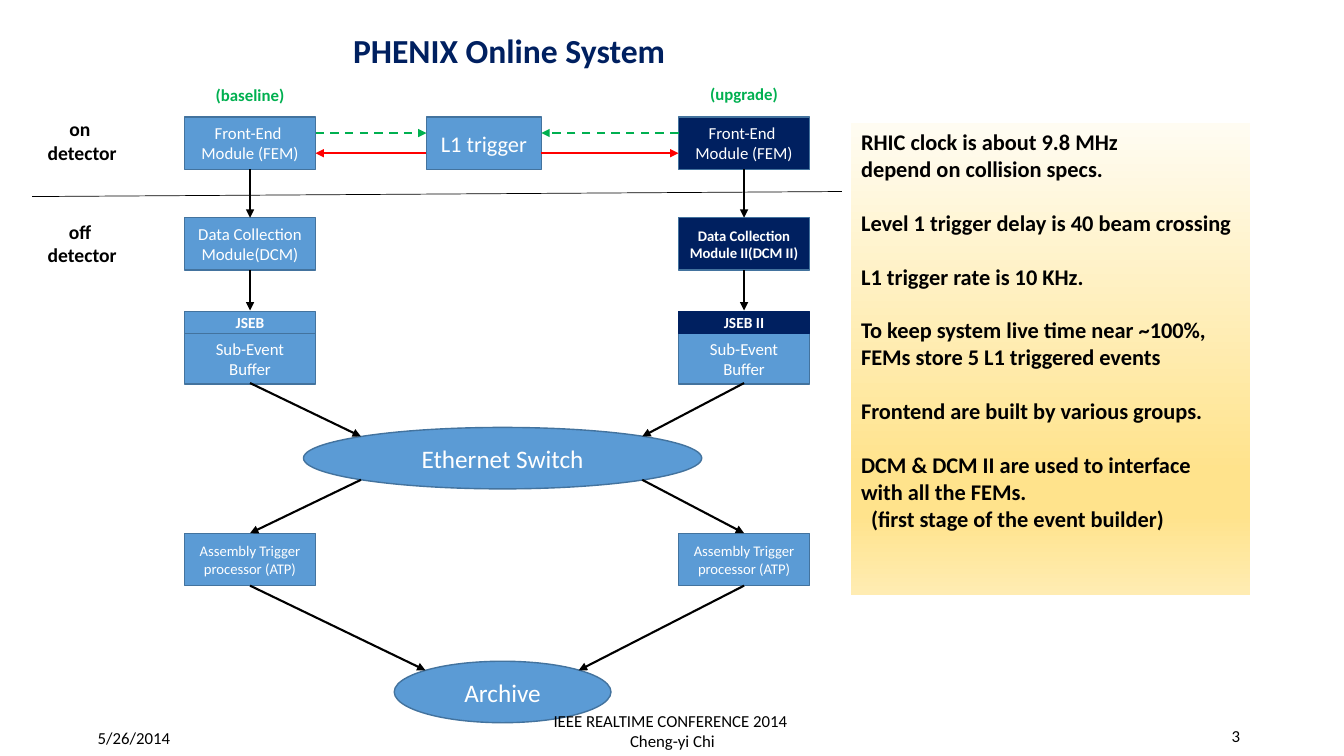
from copy import deepcopy

from pptx import Presentation
from pptx.dml.color import RGBColor
from pptx.enum.dml import MSO_LINE
from pptx.enum.shapes import MSO_CONNECTOR, MSO_SHAPE
from pptx.enum.text import MSO_ANCHOR, MSO_AUTO_SIZE, PP_ALIGN
from pptx.oxml.ns import qn
from pptx.oxml.xmlchemy import OxmlElement
from pptx.util import Inches, Pt

RECT, ELLIPSE = MSO_SHAPE.RECTANGLE, MSO_SHAPE.OVAL
STRAIGHT, DASH = MSO_CONNECTOR.STRAIGHT, MSO_LINE.DASH
LEFT, CENTER, RIGHT = PP_ALIGN.LEFT, PP_ALIGN.CENTER, PP_ALIGN.RIGHT
TOP, MIDDLE = MSO_ANCHOR.TOP, MSO_ANCHOR.MIDDLE
NO_FIT = MSO_AUTO_SIZE.NONE

WHITE = RGBColor(0xFF, 0xFF, 0xFF)
BLACK = RGBColor(0x00, 0x00, 0x00)
BLUE = RGBColor(0x5B, 0x9B, 0xD5)
EDGE = RGBColor(0x43, 0x73, 0x9E)
NAVY = RGBColor(0x00, 0x20, 0x60)
GREEN = RGBColor(0x00, 0xB0, 0x50)
RED = RGBColor(0xFF, 0x00, 0x00)
PALE = RGBColor(0xFF, 0xFC, 0xF2)
GOLD = RGBColor(0xFF, 0xE3, 0x8C)
SAND = RGBColor(0xFF, 0xEC, 0xB2)
PANEL_STOPS = [(0, PALE), (0.74, GOLD), (0.83, GOLD), (1, SAND)]

BOX_W, BOX_H = 1.3, 0.52
FEM = "Front-End \nModule (FEM)"
ATP = "Assembly Trigger processor (ATP)"
BUFFER = "Sub-Event\nBuffer"
COLUMNS = [
    dict(x=1.83, fill=BLUE, edge=EDGE, dcm="Data Collection\nModule(DCM)", dcm_size=12,
         dcm_bold=False, jseb="JSEB", switch_x=3.58, archive_x=4.22,
         label="(baseline)", label_y=0.79),
    dict(x=6.73, fill=NAVY, edge=NAVY, dcm="Data Collection\nModule II(DCM II)", dcm_size=10.5,
         dcm_bold=True, jseb="JSEB II", switch_x=6.37, archive_x=5.74,
         label="(upgrade)", label_y=0.78),
]
NOTES = [
    ["RHIC clock is about 9.8 MHz", "depend on collision specs."],
    ["Level 1 trigger delay is 40 beam crossing"],
    ["L1 trigger rate is 10 KHz."],
    ["To keep system live time near ~100%,", "FEMs store 5 L1 triggered events"],
    ["Frontend are built by various groups."],
    ["DCM & DCM II are used to interface", "with all the FEMs.",
     "(first stage of the event builder)"],
]


class Deck:
    """Draws styled elements on the current slide."""

    font = "Calibri"

    def __init__(self, prs):
        self.s = prs.slides.add_slide(prs.slide_layouts[1])

    def fill_text(self, sp, text, size, color, bold=False, align=CENTER, anchor=MIDDLE, wrap=True):
        tf = sp.text_frame
        tf.text = text
        frame = dict(auto_size=NO_FIT, word_wrap=wrap, vertical_anchor=anchor,
                     margin_left=Inches(0.1), margin_right=Inches(0.1),
                     margin_top=Inches(0.05), margin_bottom=Inches(0.05))
        for name, value in frame.items():
            setattr(tf, name, value)
        for p in tf.paragraphs:
            p.alignment = align
            for r in p.runs:
                for name, value in dict(name=self.font, size=Pt(size), bold=bold).items():
                    setattr(r.font, name, value)
                r.font.color.rgb = color

    def place(self, sp, *at):
        for name, value in zip(("left", "top", "width", "height"), at):
            setattr(sp, name, Inches(value))

    def shape(self, kind, at, text, size, fill=BLUE, edge=EDGE, bold=False):
        sp = self.s.shapes.add_shape(kind, *map(Inches, at))
        sp.shadow.inherit = False
        sp.fill.solid()
        sp.fill.fore_color.rgb = fill
        sp.line.color.rgb = edge
        sp.line.width = Pt(1)
        self.fill_text(sp, text, size, WHITE, bold)

    def text(self, at, text, size, color=BLACK, **style):
        self.fill_text(self.s.shapes.add_textbox(*map(Inches, at)), text, size, color, **style)

    def line(self, start, end, color=BLACK, width=1.5, dash=None, arrow=True):
        ln = self.s.shapes.add_connector(STRAIGHT, *map(Inches, (*start, *end)))
        ln.line.color.rgb = color
        ln.line.width = Pt(width)
        if dash:
            ln.line.dash_style = dash
        if arrow:
            tail = OxmlElement("a:tailEnd")
            tail.set("type", "triangle")
            ln._element.spPr.find(qn("a:ln")).append(tail)
        ln._element.spPr.append(OxmlElement("a:effectLst"))

    def title(self, at, text):
        sp = self.s.shapes.title
        self.place(sp, *at)
        self.fill_text(sp, text, 24, NAVY, bold=True, wrap=False)

    def panel(self, at, groups, stops):
        sp = self.s.placeholders[1]
        self.place(sp, *at)
        lines = [text for group in groups for text in group]
        self.fill_text(sp, "\n".join(lines), 16, BLACK, bold=True, align=LEFT, anchor=TOP)
        sp.text_frame.margin_right = 0
        openers = [group[0] for group in groups[1:]]
        for p in sp.text_frame.paragraphs:
            p.space_before = Pt(19.3 if p.text in openers else 0)
            pPr = p._p.get_or_add_pPr()
            pPr.set("marL", str(Inches(0.1 if p.text.startswith("(") else 0)))
            pPr.set("indent", "0")
            pPr.append(OxmlElement("a:buNone"))
        sp.fill.gradient()
        sp.fill.gradient_angle = 270
        gs_list = sp._element.spPr.find(qn("a:gradFill")).find(qn("a:gsLst"))
        for _ in range(len(stops) - len(gs_list)):
            gs_list.append(deepcopy(gs_list[0]))
        for stop, (position, color) in zip(sp.fill.gradient_stops, stops):
            stop.position = position
            stop.color.rgb = color


def main():
    prs = Presentation()
    prs.slide_width, prs.slide_height = Inches(13.33), Inches(7.5)
    deck = Deck(prs)
    deck.title((3.35, 0.25, 3.4, 0.5), "PHENIX Online System")
    deck.panel((8.44, 1.22, 3.96, 4.68), NOTES, PANEL_STOPS)

    deck.shape(ELLIPSE, (3.01, 4.24, 3.95, 0.61), "Ethernet Switch", 18)
    deck.shape(ELLIPSE, (3.91, 6.56, 2.15, 0.61), "Archive", 18)
    deck.shape(RECT, (4.23, 1.16, 1.14, BOX_H), "L1 trigger", 16)

    for col in COLUMNS:
        x, mid = col["x"], col["x"] + BOX_W / 2
        deck.shape(RECT, (x, 1.16, BOX_W, BOX_H), FEM, 12, col["fill"])
        deck.shape(RECT, (x, 2.16, BOX_W, BOX_H), col["dcm"], col["dcm_size"],
                   col["fill"], bold=col["dcm_bold"])
        deck.shape(RECT, (x, 3.31, BOX_W, 0.5), BUFFER, 12)
        deck.shape(RECT, (x, 3.09, BOX_W, 0.22), col["jseb"], 11,
                   col["fill"], col["edge"], bold=True)
        deck.shape(RECT, (x, 5.29, BOX_W, BOX_H), ATP, 10.5)
        deck.text((mid - 0.44, col["label_y"], 0.88, 0.3), col["label"], 12, GREEN,
                  bold=True, wrap=False)
        flow = [
            ((mid, 1.68), (mid, 2.16)),
            ((mid, 2.68), (mid, 3.08)),
            ((mid, 3.8), (col["switch_x"], 4.33)),
            ((col["switch_x"], 4.76), (mid, 5.29)),
            ((mid, 5.81), (col["archive_x"], 6.65)),
        ]
        for start, end in flow:
            deck.line(start, end)

    for fem_x, trigger_x in ((3.13, 4.23), (6.73, 5.37)):
        deck.line((fem_x, 1.32), (trigger_x, 1.32), GREEN, dash=DASH)
        deck.line((trigger_x, 1.52), (fem_x, 1.52), RED)
    deck.line((0.32, 1.95), (8.35, 1.9), width=0.5, arrow=False)

    for y, side in ((1.11, "on "), (2.13, "off ")):
        deck.text((0.37, y, 0.89, 0.57), side + "\ndetector", 14, bold=True, wrap=False)
    deck.text((4.42, 7.05, 4.5, 0.4), "IEEE REALTIME CONFERENCE 2014 \nCheng-yi Chi", 12)
    deck.text((9.4, 7.1, 3, 0.4), "3", 12, align=RIGHT)
    deck.text((0.87, 7.12, 3, 0.4), "5/26/2014", 12, align=LEFT)
    prs.save("out.pptx")


if __name__ == "__main__":
    main()
